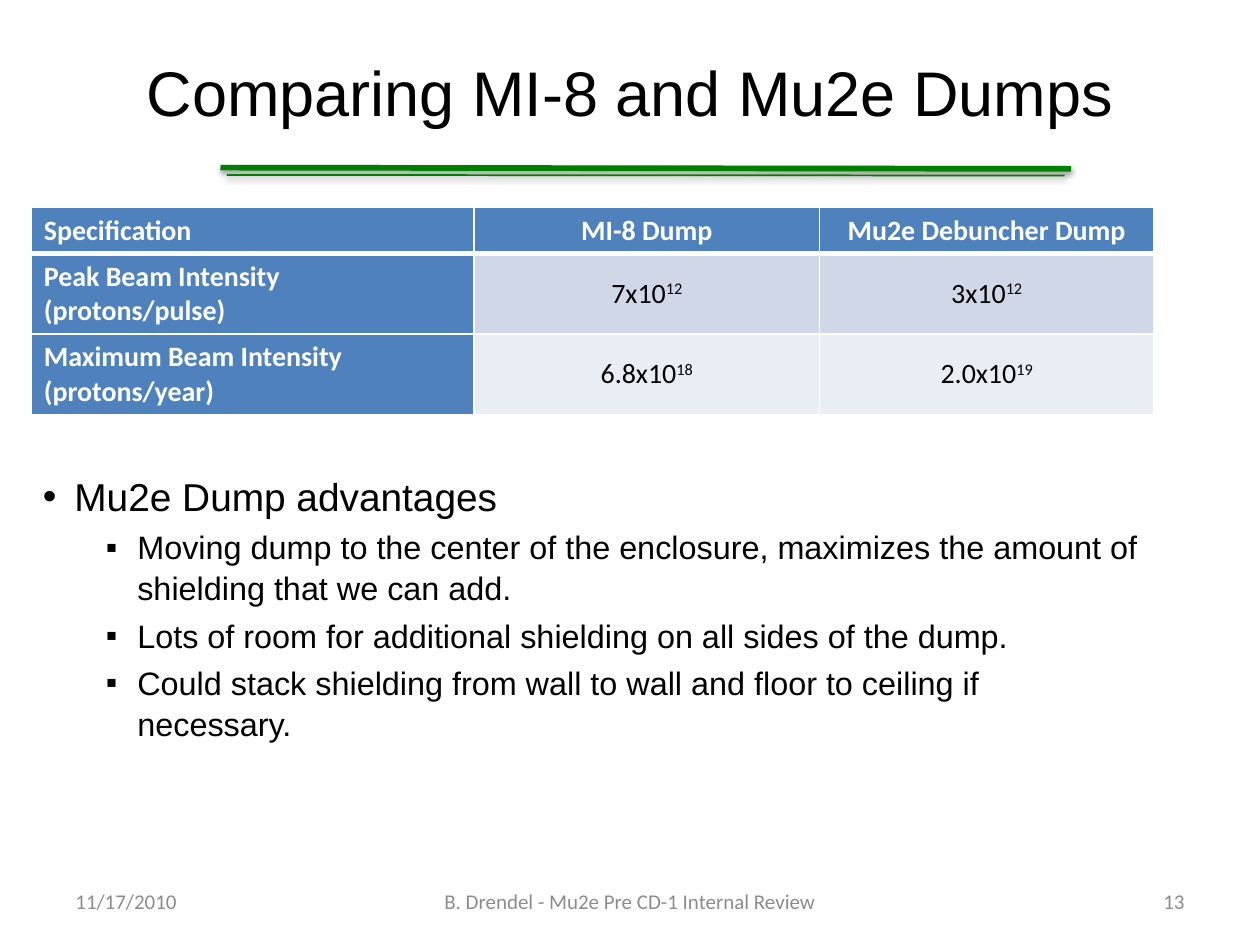
"""Build the slide that compares the MI-8 and Mu2e beam dumps."""
from lxml import etree
from pptx import Presentation
from pptx.dml.color import RGBColor
from pptx.enum.shapes import MSO_CONNECTOR
from pptx.enum.text import MSO_ANCHOR, MSO_AUTO_SIZE, PP_ALIGN
from pptx.oxml.ns import qn
from pptx.util import Pt

STRAIGHT = MSO_CONNECTOR.STRAIGHT
MIDDLE = MSO_ANCHOR.MIDDLE
NO_FIT = MSO_AUTO_SIZE.NONE
LEFT, CENTER, RIGHT = PP_ALIGN.LEFT, PP_ALIGN.CENTER, PP_ALIGN.RIGHT

BLACK = RGBColor(0x00, 0x00, 0x00)
WHITE = RGBColor(0xFF, 0xFF, 0xFF)
GREEN = RGBColor(0x00, 0x80, 0x00)
GRAY = RGBColor(0x8C, 0x8C, 0x8C)
BLUE = RGBColor(0x4F, 0x81, 0xBD)
BANDS = [RGBColor(0xD0, 0xD8, 0xE8), RGBColor(0xE9, 0xED, 0xF4)]

HEADINGS = ["Specification", "MI-8 Dump", "Mu2e Debuncher Dump"]
INTENSITIES = [
    ("Peak Beam Intensity (protons/pulse)", ("7x10", "12"), ("3x10", "12")),
    ("Maximum Beam Intensity (protons/year)", ("6.8x10", "18"), ("2.0x10", "19")),
]
ADVANTAGES = [
    (0, "Mu2e Dump advantages"),
    (1, "Moving dump to the center of the enclosure, maximizes the amount of "
        "shielding that we can add."),
    (1, "Lots of room for additional shielding on all sides of the dump."),
    (1, "Could stack shielding from wall to wall and floor to ceiling if necessary."),
]
LEVELS = [("•", 18, 22.2, 1.0), ("▪", 54, 18.5, 1.05)]
FOOTERS = [
    (36, 168, LEFT, "11/17/2010"),
    (246, 228, CENTER, "B. Drendel - Mu2e Pre CD-1 Internal Review"),
    (516, 168, RIGHT, "13"),
]


def add_element(parent, tag, **attributes):
    """Append an XML element with the given attributes."""
    return etree.SubElement(parent, qn(tag), {k: str(v) for k, v in attributes.items()})


class SlideWriter:
    """Hold the fonts and the current page, and draw each kind of element."""

    heading_font = "Arial"
    table_font = "Calibri"

    def __init__(self, page):
        self.page = page

    def place(self, box, left, top, width, height):
        """Move a box and give it its size."""
        box.left, box.top = Pt(left), Pt(top)
        box.width, box.height = Pt(width), Pt(height)

    def span(self, para, text, font, size, color, bold=False, raised=False):
        """Add one run of formatted text."""
        run = para.add_run()
        run.text = text
        run.font.name, run.font.size, run.font.bold = font, Pt(size), bold
        run.font.color.rgb = color
        if raised:
            run.font._element.set("baseline", "30000")

    def title(self, text):
        """Fill the title placeholder."""
        box = self.page.shapes.title
        self.place(box, 36, 7.2, 648, 90)
        frame = box.text_frame
        frame.auto_size, frame.vertical_anchor = NO_FIT, MIDDLE
        para = frame.paragraphs[0]
        para.alignment = CENTER
        self.span(para, text, self.heading_font, 36, BLACK)

    def bullets(self, items):
        """Fill the body placeholder with a two-level list."""
        box = self.page.placeholders[1]
        self.place(box, 17.3, 266.4, 641.5, 146.9)
        frame = box.text_frame
        frame.auto_size = NO_FIT
        for index, (level, text) in enumerate(items):
            para = frame.add_paragraph() if index else frame.paragraphs[0]
            mark, indent, size, spacing = LEVELS[level]
            para.level = level
            properties = para._p.get_or_add_pPr()
            properties.set("marL", str(Pt(indent)))
            properties.set("indent", str(Pt(-18)))
            add_element(properties, "a:buFont", typeface=self.heading_font)
            add_element(properties, "a:buChar", char=mark)
            para.line_spacing = spacing
            para.space_before = Pt(size * 0.2 if index else 0)
            self.span(para, text, self.heading_font, size, BLACK)

    def rule(self, start, end, weight):
        """Draw a green line with a soft shadow."""
        line = self.page.shapes.add_connector(STRAIGHT, *map(Pt, start + end))
        line.line.color.rgb, line.line.width = GREEN, Pt(weight)
        effects = add_element(line._element.spPr, "a:effectLst")
        shadow = add_element(effects, "a:outerShdw", blurRad=Pt(3.1), dist=Pt(1.6),
                             dir=90 * 60000, rotWithShape=0)
        color = add_element(shadow, "a:srgbClr", val=BLACK)
        add_element(color, "a:alpha", val=38000)

    def label(self, left, width, alignment, text):
        """Write one footer text."""
        box = self.page.shapes.add_textbox(Pt(left), Pt(500.4), Pt(width), Pt(28.8))
        frame = box.text_frame
        frame.word_wrap, frame.vertical_anchor = True, MIDDLE
        para = frame.paragraphs[0]
        para.alignment = alignment
        self.span(para, text, self.table_font, 12, GRAY)

    def cell(self, cell, parts, column, fill, strong, top, bottom):
        """Format one table cell, with its second text part raised."""
        properties = cell._tc.get_or_add_tcPr()
        for side, weight in zip("LRTB", (1, 1, top, bottom)):
            border = add_element(properties, f"a:ln{side}", w=Pt(weight))
            add_element(add_element(border, "a:solidFill"), "a:srgbClr", val=WHITE)
        cell.fill.solid()
        cell.fill.fore_color.rgb = fill
        cell.vertical_anchor = MIDDLE
        para = cell.text_frame.paragraphs[0]
        para.alignment = CENTER if column else LEFT
        for index, text in enumerate(parts):
            self.span(para, text, self.table_font, 16, WHITE if strong else BLACK,
                      bold=strong, raised=index > 0)

    def table(self, headings, records):
        """Draw the table with a header row and a header column."""
        widths, heights = (253, 197.4, 191.1), (26, 46, 46)
        frame = self.page.shapes.add_table(len(heights), len(widths), Pt(17.9), Pt(118.4),
                                           Pt(sum(widths)), Pt(sum(heights)))
        table = frame.table
        for column, width in zip(table.columns, widths):
            column.width = Pt(width)
        for row, height in zip(table.rows, heights):
            row.height = Pt(height)
        for row, values in enumerate([headings, *records]):
            for column, value in enumerate(values):
                strong = row == 0 or column == 0
                parts = (value,) if strong else value
                self.cell(table.cell(row, column), parts, column,
                          BLUE if strong else BANDS[row - 1], strong,
                          top=3 if row == 1 else 1, bottom=3 if row == 0 else 1)


def main():
    """Build and save the deck."""
    deck = Presentation()
    deck.slide_width, deck.slide_height = Pt(720), Pt(540)
    writer = SlideWriter(deck.slides.add_slide(deck.slide_layouts[1]))
    writer.rule((126, 95.8), (612, 96.5), 3.25)
    writer.rule((129.6, 100), (608.4, 100.3), 1)
    writer.title("Comparing MI-8 and Mu2e Dumps")
    writer.bullets(ADVANTAGES)
    for footer in FOOTERS:
        writer.label(*footer)
    writer.table(HEADINGS, INTENSITIES)
    deck.save("out.pptx")


if __name__ == "__main__":
    main()
